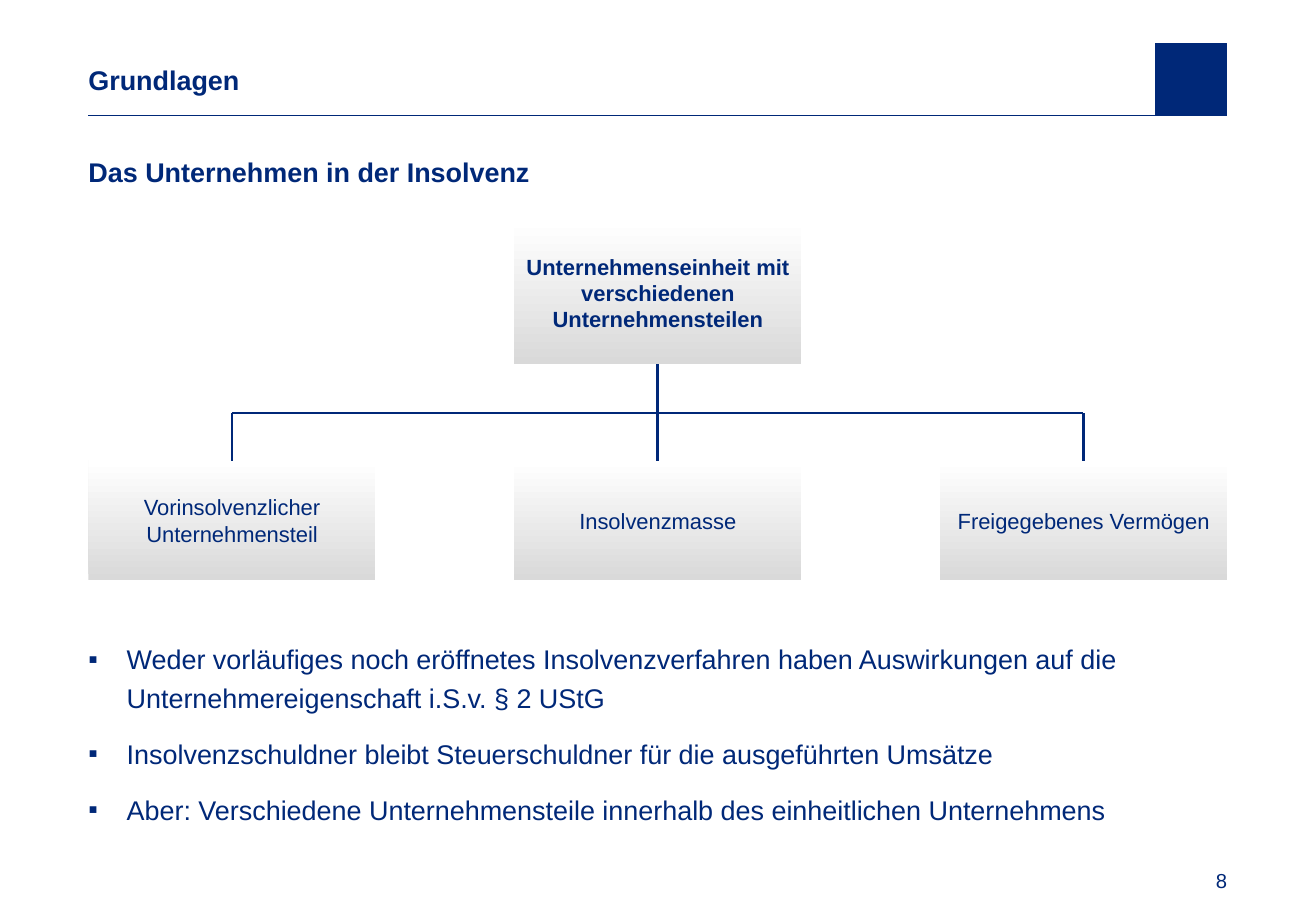
from lxml import etree
from pptx import Presentation
from pptx.dml.color import RGBColor
from pptx.enum.shapes import MSO_CONNECTOR, MSO_SHAPE
from pptx.enum.text import MSO_ANCHOR, PP_ALIGN
from pptx.oxml.ns import qn
from pptx.util import Cm, Pt

NAVY = RGBColor(0x00, 0x28, 0x78)
GREY = RGBColor(0xD9, 0xD9, 0xD9)
WHITE = RGBColor(0xFF, 0xFF, 0xFF)
RECT = MSO_SHAPE.RECTANGLE
LINE = MSO_CONNECTOR.STRAIGHT
TOP, MIDDLE, BOTTOM = MSO_ANCHOR.TOP, MSO_ANCHOR.MIDDLE, MSO_ANCHOR.BOTTOM
LEFT, CENTER, RIGHT = PP_ALIGN.LEFT, PP_ALIGN.CENTER, PP_ALIGN.RIGHT
EDGE, WIDTH = 1.85, 23.8
BOX, PITCH = 6, 8.9
ROW, BAR = 9.63, 8.64
PARTS = ["Vorinsolvenzlicher Unternehmensteil", "Insolvenzmasse", "Freigegebenes Vermögen"]
POINTS = [
    "Weder vorläufiges noch eröffnetes Insolvenzverfahren haben Auswirkungen auf die "
    "Unternehmereigenschaft i.S.v. § 2 UStG",
    "Insolvenzschuldner bleibt Steuerschuldner für die ausgeführten Umsätze",
    "Aber: Verschiedene Unternehmensteile innerhalb des einheitlichen Unternehmens",
]


class Sheet:
    """Holds the slide and its style and draws each kind of element."""

    def __init__(self, slide, font="Arial", color=NAVY):
        self.shapes = slide.shapes
        self.font = font
        self.color = color

    def label(self, shape, lines, size, bold=False, align=LEFT, anchor=TOP, inset=0.0):
        frame = shape.text_frame
        frame.word_wrap = True
        frame.vertical_anchor = anchor
        frame.margin_left = frame.margin_right = Cm(inset)
        frame.margin_top = frame.margin_bottom = Cm(inset)
        frame.text = "\n".join(lines)
        for para in frame.paragraphs:
            para.alignment = align
            for run in para.runs:
                run.font.name = self.font
                run.font.size = Pt(size)
                run.font.bold = bold
                run.font.color.rgb = self.color
        return frame.paragraphs

    def text(self, x, y, w, h, lines, size, **style):
        shape = self.shapes.add_textbox(Cm(x), Cm(y), Cm(w), Cm(h))
        return self.label(shape, lines, size, **style)

    def bullets(self, x, y, w, h, lines, size, indent):
        paras = self.text(x, y, w, h, lines, size)
        for i, para in enumerate(paras):
            para.line_spacing = 1.2
            if i:
                para.space_before = Pt(10)
            props = para._p.get_or_add_pPr()
            props.set("marL", str(Cm(indent)))
            props.set("indent", str(-Cm(indent)))
            etree.SubElement(props, qn("a:buFont")).set("typeface", self.font)
            etree.SubElement(props, qn("a:buChar")).set("char", "▪")

    def rect(self, x, y, w, h):
        shape = self.shapes.add_shape(RECT, Cm(x), Cm(y), Cm(w), Cm(h))
        shape.shadow.inherit = False
        return shape

    def block(self, x, y, side):
        shape = self.rect(x, y, side, side)
        shape.fill.solid()
        shape.fill.fore_color.rgb = self.color
        shape.line.color.rgb = self.color
        shape.line.width = Pt(0.5)

    def box(self, x, y, h, name, bold=False):
        shape = self.rect(x, y, BOX, h)
        shape.line.fill.background()
        shape.fill.gradient()
        shape.fill.gradient_angle = 90
        for stop, tone in zip(shape.fill.gradient_stops, (GREY, WHITE)):
            stop.color.rgb = tone
        self.label(shape, [name], 13, bold=bold, align=CENTER, anchor=MIDDLE, inset=0.2)
        return shape

    def line(self, x1, y1, x2, y2, width, start=None, end=None):
        link = self.shapes.add_connector(LINE, Cm(x1), Cm(y1), Cm(x2), Cm(y2))
        link.line.color.rgb = self.color
        link.line.width = Pt(width)
        etree.SubElement(link._element.spPr, qn("a:effectLst"))
        if start:
            link.begin_connect(start, 2)
        if end:
            link.end_connect(end, 0)


def main():
    deck = Presentation()
    deck.slide_width, deck.slide_height = Cm(27.51), Cm(19.05)
    sheet = Sheet(deck.slides.add_slide(deck.slide_layouts[6]))

    sheet.block(EDGE + WIDTH - 1.5, 0.91, 1.5)
    sheet.line(EDGE, 2.41, EDGE + WIDTH, 2.41, 0.5)
    sheet.text(EDGE, 0.91, 21.3, 1.5, ["Grundlagen"], 16, bold=True, anchor=MIDDLE)
    head = sheet.text(EDGE, 3.12, WIDTH, 1, ["Das Unternehmen in der Insolvenz"], 16, bold=True)
    head[0].line_spacing = 1.2

    unit = sheet.box(EDGE + PITCH, 4.62, 3,
                     "Unternehmenseinheit mit verschiedenen Unternehmensteilen", bold=True)
    mids = [EDGE + BOX / 2 + i * PITCH for i in range(len(PARTS))]
    for mid, name in zip(mids, PARTS):
        part = sheet.box(mid - BOX / 2, ROW, 2.5, name)
        start = unit if mid == mids[1] else None
        sheet.line(mid, BAR, mid, ROW, 1.5, start=start, end=part)
    sheet.line(mids[0], BAR, mids[-1], BAR, 1.5)

    sheet.bullets(EDGE, 13.31, WIDTH, 4.4, POINTS, 16, 0.8)
    sheet.text(EDGE + WIDTH - 1.3, 18.03, 1.3, 0.64, ["8"], 12, align=RIGHT, anchor=BOTTOM)
    deck.save("out.pptx")


if __name__ == "__main__":
    main()
